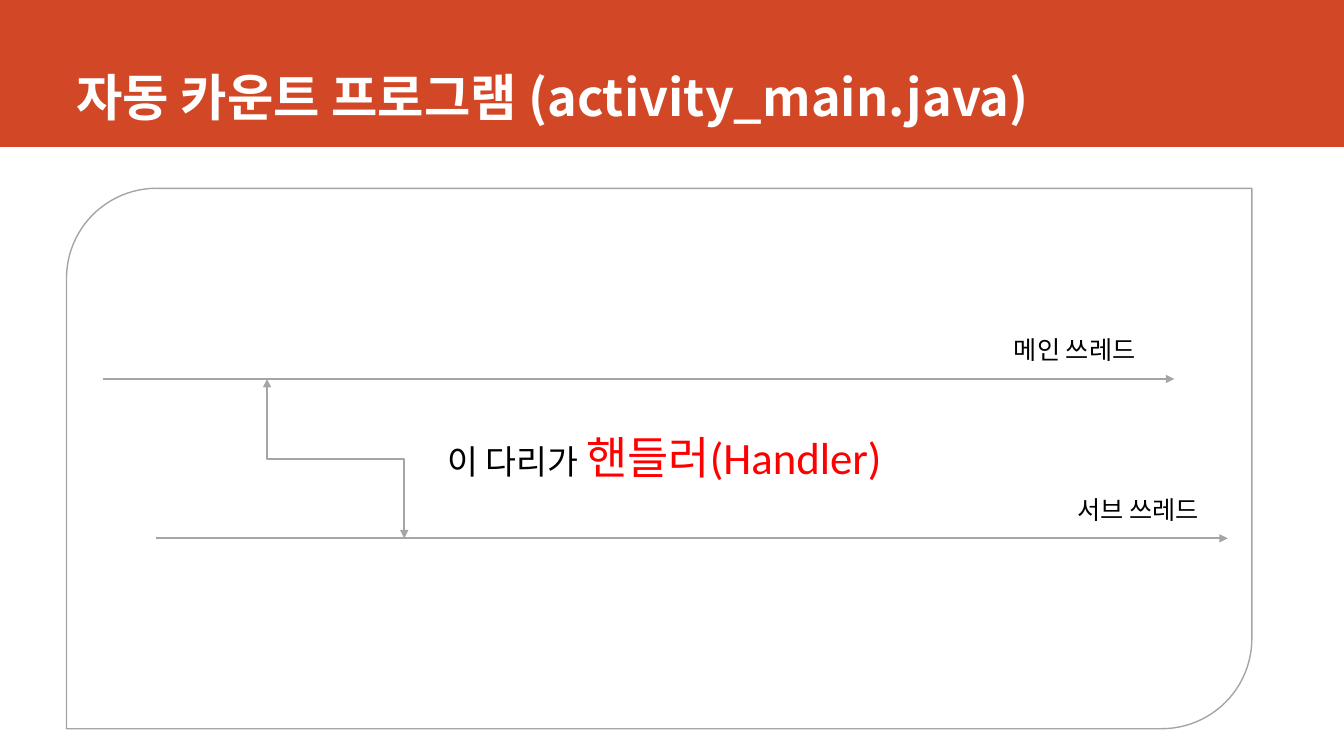
from pptx import Presentation
from pptx.dml.color import RGBColor
from pptx.enum.shapes import MSO_CONNECTOR as Link, MSO_SHAPE as Shape
from pptx.enum.text import MSO_ANCHOR as Anchor, MSO_AUTO_SIZE as AutoSize, PP_ALIGN as Align
from pptx.oxml.ns import qn
from pptx.util import Pt
from lxml.etree import SubElement

GREY, RED, BLACK, WHITE, ORANGE = "A5A5A5", "FF0000", "000000", "FFFFFF", "D24726"
KOREAN_FONT = "Noto Sans CJK KR"
MAIN_Y, SUB_Y = 270.7, 384.5
THREAD_LENGTH = 765.4


def paint(color_format, color):
    color_format.rgb = RGBColor.from_string(color)


def add_span(para, text, size, font, color, bold=False):
    span = para.add_run()
    span.text = text
    span.font.size = Pt(size)
    span.font.bold = bold
    span.font.name = font
    span.font.fill.solid()
    paint(span.font.fill.fore_color, color)
    SubElement(span.font._element, qn("a:ea")).set("typeface", KOREAN_FONT)


def place(box, left, top, width, height):
    box.left, box.top, box.width, box.height = map(Pt, (left, top, width, height))


def add_title(page, text):
    title = page.shapes.title
    place(title, 47.5, 0, 846.7, 95)
    frame = title.text_frame
    frame.word_wrap = True
    frame.auto_size = AutoSize.NONE
    frame.vertical_anchor = Anchor.BOTTOM
    para = frame.paragraphs[0]
    para.alignment = Align.LEFT
    para.line_spacing = 0.9
    add_span(para, text, 36, KOREAN_FONT, WHITE, bold=True)
    return title


def add_panel(page, kind, left, top, width, height, fill, line=None):
    panel = page.shapes.add_shape(kind, *map(Pt, (left, top, width, height)))
    panel.shadow.inherit = False
    panel.fill.solid()
    paint(panel.fill.fore_color, fill)
    if line:
        paint(panel.line.color, line)
        panel.line.width = Pt(1)
    else:
        panel.line.fill.background()
    return panel


def add_text(page, left, top, width, height, spans):
    box = page.shapes.add_textbox(*map(Pt, (left, top, width, height)))
    box.text_frame.word_wrap = True
    box.text_frame.auto_size = AutoSize.SHAPE_TO_FIT_TEXT
    for span in spans:
        add_span(box.text_frame.paragraphs[0], *span)


def add_arrow(page, kind, start, end, tips):
    arrow = page.shapes.add_connector(kind, *map(Pt, (*start, *end)))
    paint(arrow.line.color, GREY)
    arrow.line.width = Pt(1.5)
    for tip in tips:
        SubElement(arrow.line._ln, qn(f"a:{tip}")).set("type", "triangle")
    SubElement(arrow._element.spPr, qn("a:effectLst"))
    return arrow


def add_bridge(page, start, end):
    # A quarter turn makes the elbow leave and arrive vertically
    middle_x, middle_y = (start[0] + end[0]) / 2, (start[1] + end[1]) / 2
    half_x, half_y = (end[1] - start[1]) / 2, (end[0] - start[0]) / 2
    bridge = add_arrow(page, Link.ELBOW,
                       (middle_x + half_x, middle_y - half_y),
                       (middle_x - half_x, middle_y + half_y),
                       ("headEnd", "tailEnd"))
    bridge._element.spPr.find(qn("a:xfrm")).set("rot", str(270 * 60000))


def add_thread(page, name, left, y, label_left):
    add_arrow(page, Link.STRAIGHT, (left, y), (left + THREAD_LENGTH, y), ("tailEnd",))
    add_text(page, label_left, y - 35.3, 114.5, 29, [(name, 18, "Cabin", BLACK)])


def main():
    deck = Presentation()
    deck.slide_width, deck.slide_height = Pt(960), Pt(540)
    page = deck.slides.add_slide(deck.slide_layouts[5])

    # Title on its colour band
    title = add_title(page, "자동 카운트 프로그램 (activity_main.java)")
    band = add_panel(page, Shape.RECTANGLE, 0, 0, 960, 105, ORANGE)
    title._element.addprevious(band._element)

    # Frame and the two threads
    add_panel(page, Shape.ROUND_2_DIAG_RECTANGLE, 47.5, 134.5, 846.7, 386, WHITE, GREY)
    add_thread(page, "메인 쓰레드", 73.4, MAIN_Y, 717.1)
    add_thread(page, "서브 쓰레드", 111.6, SUB_Y, 762.5)

    # Handler bridging the threads
    add_bridge(page, (190.7, MAIN_Y), (288.7, SUB_Y))
    add_text(page, 312.5, 303.1, 393.8, 46,
             [("이 다리가 ", 24, "Calibri", BLACK),
              ("핸들러(Handler)", 32, "Calibri", RED)])

    deck.save("out.pptx")


if __name__ == "__main__":
    main()
